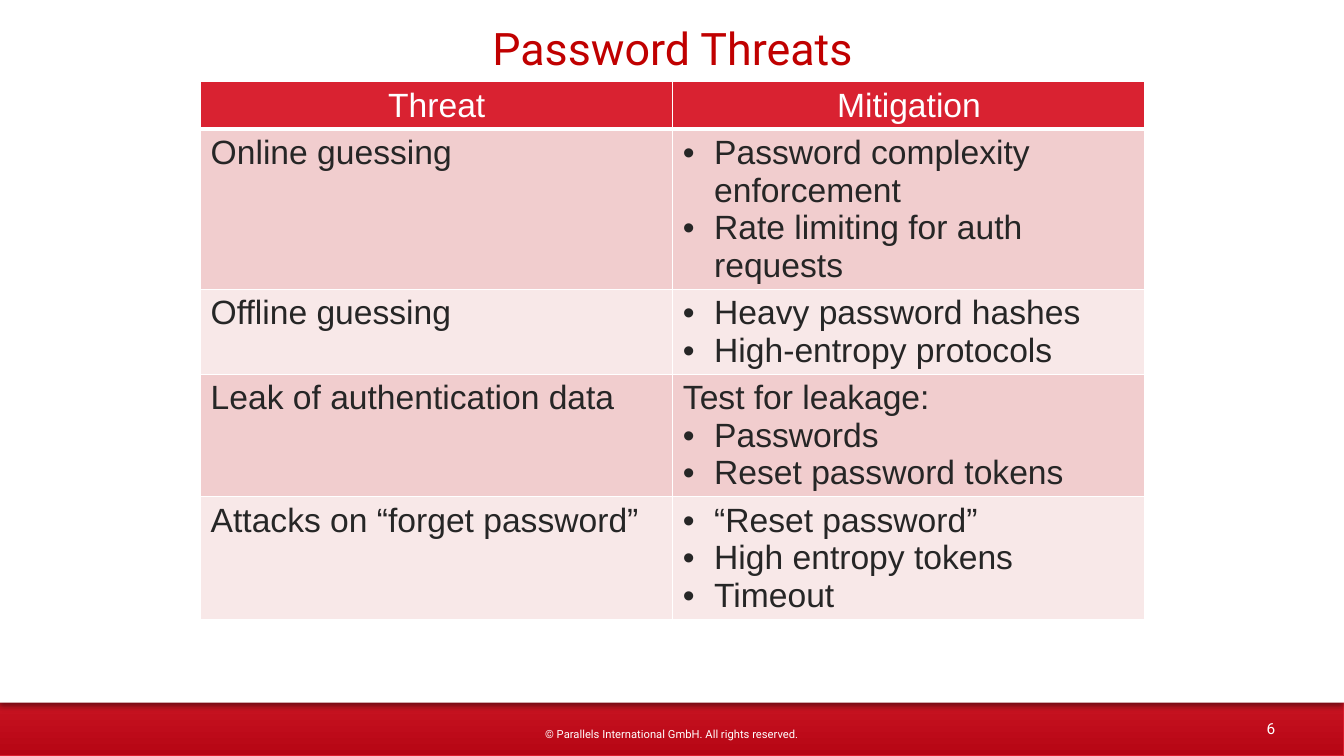
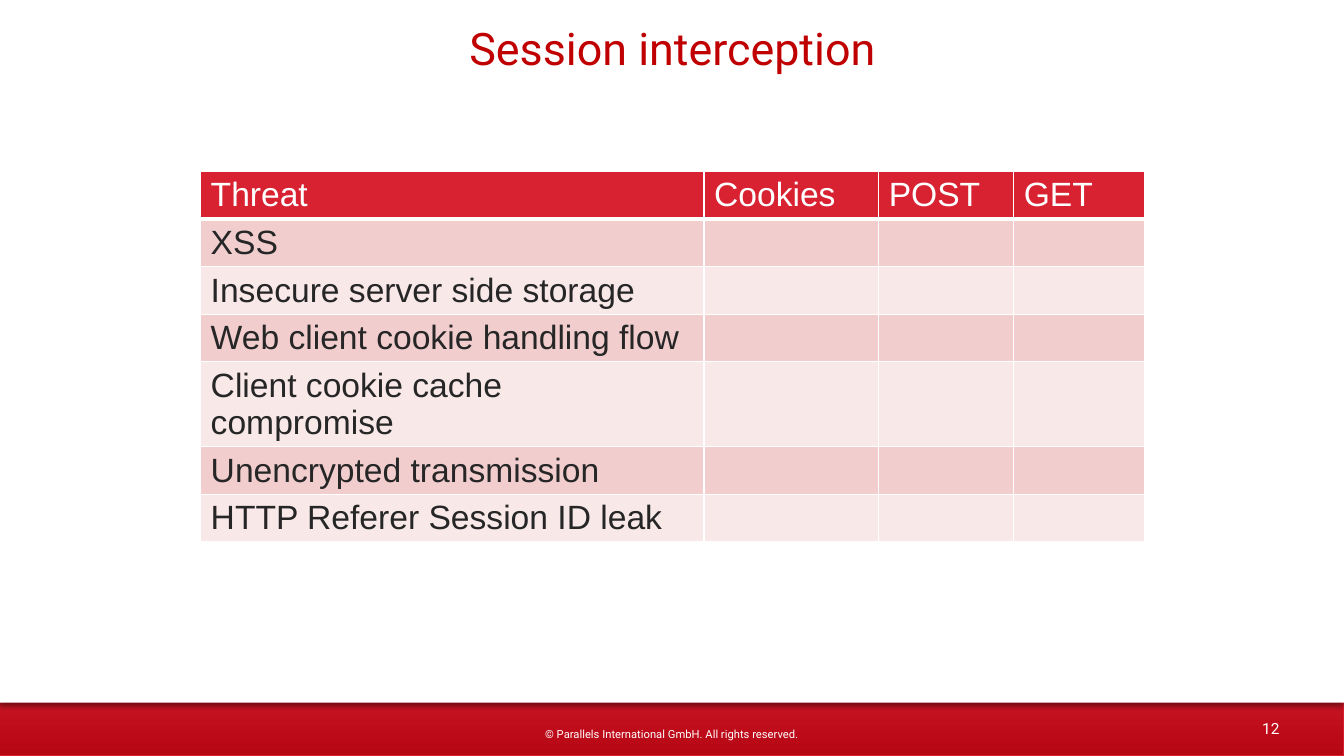
from lxml.etree import SubElement
from pptx import Presentation
from pptx.dml.color import RGBColor
from pptx.enum.shapes import MSO_SHAPE
from pptx.enum.text import MSO_ANCHOR, PP_ALIGN
from pptx.oxml import parse_xml
from pptx.oxml.ns import nsdecls, qn
from pptx.util import Inches, Pt

WHITE = RGBColor(0xFF, 0xFF, 0xFF)
INK = RGBColor(0x26, 0x26, 0x26)
TITLE_RED = RGBColor(0xC0, 0x00, 0x00)
BAND_DARK = RGBColor(0xB6, 0x05, 0x13)
BAND_LIGHT = RGBColor(0xD9, 0x22, 0x31)
BAND_EDGE = RGBColor(0xD9, 0x1D, 0x2C)
ROW_FILLS = (RGBColor(0xF8, 0xE8, 0xE8), RGBColor(0xF1, 0xCD, 0xCE))

TITLE = {"name": "Roboto", "size": Pt(32), "color": TITLE_RED}
NUMBER = {"name": "Roboto", "size": Pt(11), "color": WHITE}
COPYRIGHT = {"name": "Roboto", "size": Pt(8), "color": WHITE}
HEADER = {"name": "Arial", "size": Pt(24), "color": WHITE, "bold": False}
BODY = {**HEADER, "color": INK}

BULLET = "•"
BULLET_INDENT = Inches(0.31)
TABLE_LEFT, TABLE_WIDTH = 14.93, 70.27
LINE_HEIGHT, CELL_PADDING = 4.93, 1.33


class SlideBuilder:
    def __init__(self):
        self.deck = Presentation()
        self.deck.slide_width = Inches(13.33)
        self.deck.slide_height = Inches(7.5)
        self.page = None

    def across(self, percent):
        return round(self.deck.slide_width * percent / 100)

    def down(self, percent):
        return round(self.deck.slide_height * percent / 100)

    def area(self, left, top, width, height):
        return self.across(left), self.down(top), self.across(width), self.down(height)

    def add_text(self, para, text, style, align=PP_ALIGN.LEFT):
        para.alignment = align
        span = para.add_run()
        span.text = text
        for key, value in style.items():
            if key == "color":
                span.font.color.rgb = value
            else:
                setattr(span.font, key, value)

    def start(self, title, number):
        self.page = self.deck.slides.add_slide(self.deck.slide_layouts[5])
        self.band()
        self.label(str(number), NUMBER, (92.5, 94.27, 4.13, 4.13))
        self.label("© Parallels International GmbH. All rights reserved.",
                   COPYRIGHT, (38.4, 96.27, 23.2, 1.73),
                   {"vertical_anchor": MSO_ANCHOR.TOP, "margin_top": 0, "margin_bottom": 0})
        self.title(title)

    def title(self, text):
        box = self.page.shapes.title
        box.left, box.top, box.width, box.height = self.area(3.2, 2, 93.7, 8.53)
        box.text_frame.vertical_anchor = MSO_ANCHOR.MIDDLE
        self.add_text(box.text_frame.paragraphs[0], text, TITLE, PP_ALIGN.CENTER)
        self.page.shapes.element.append(box.element)

    def label(self, text, style, place, frame_format=None):
        box = self.page.shapes.add_textbox(*self.area(*place))
        settings = {"word_wrap": True, "vertical_anchor": MSO_ANCHOR.MIDDLE,
                    **(frame_format or {})}
        for key, value in settings.items():
            setattr(box.text_frame, key, value)
        self.add_text(box.text_frame.paragraphs[0], text, style, PP_ALIGN.CENTER)

    def panel(self, place, blur, distance, opacity):
        box = self.page.shapes.add_shape(MSO_SHAPE.RECTANGLE, *self.area(*place))
        box.shadow.inherit = False
        effects = box.element.spPr.find(qn("a:effectLst"))
        effects.append(parse_xml(
            f'<a:outerShdw {nsdecls("a")} blurRad="{Pt(blur)}" dist="{Pt(distance)}" '
            f'dir="5400000" rotWithShape="0"><a:srgbClr val="000000">'
            f'<a:alpha val="{opacity * 1000}"/></a:srgbClr></a:outerShdw>'))
        return box

    def band(self):
        band = self.panel((0, 83.33, 100, 16.67), 3.1, 1.8, 35)
        band.fill.gradient()
        band.fill.gradient_angle = 90
        stops = zip(band.fill.gradient_stops, (BAND_DARK, BAND_LIGHT), (0, 0.8))
        for stop, color, position in stops:
            stop.color.rgb = color
            stop.position = position
        band.line.color.rgb = BAND_EDGE
        band.line.width = Pt(0.75)
        sheet = self.panel((0, 0, 100, 92.93), 4, 3, 40)
        sheet.fill.solid()
        sheet.fill.fore_color.rgb = WHITE
        sheet.line.fill.background()

    def borders(self, cell, bottom):
        properties = cell._tc.get_or_add_tcPr()
        widths = {"lnL": 1, "lnR": 1, "lnT": 1, "lnB": bottom}
        for index, (side, width) in enumerate(widths.items()):
            properties.insert(index, parse_xml(
                f'<a:{side} {nsdecls("a")} w="{Pt(width)}"><a:solidFill>'
                f'<a:srgbClr val="{WHITE}"/></a:solidFill></a:{side}>'))

    def fill_cell(self, cell, text, is_header, fill, align):
        cell.fill.solid()
        cell.fill.fore_color.rgb = fill
        self.borders(cell, 3 if is_header else 1)
        frame = cell.text_frame
        for index, line in enumerate(text.splitlines()):
            para = frame.add_paragraph() if index else frame.paragraphs[0]
            if line.startswith(BULLET):
                properties = para._p.get_or_add_pPr()
                properties.set("marL", str(BULLET_INDENT))
                properties.set("indent", str(-BULLET_INDENT))
                SubElement(properties, qn("a:buFont")).set("typeface", "Arial")
                SubElement(properties, qn("a:buChar")).set("char", BULLET)
            self.add_text(para, line.removeprefix(BULLET),
                          HEADER if is_header else BODY, align)

    def table(self, top, column_shares, line_counts, rows, header_align=PP_ALIGN.LEFT):
        heights = [CELL_PADDING + count * LINE_HEIGHT for count in line_counts]
        place = self.area(TABLE_LEFT, top, TABLE_WIDTH, sum(heights))
        grid = self.page.shapes.add_table(len(rows), len(column_shares), *place).table
        for column, share in zip(grid.columns, column_shares):
            column.width = self.across(TABLE_WIDTH * share / 100)
        for row_index, (texts, height) in enumerate(zip(rows, heights)):
            grid.rows[row_index].height = self.down(height)
            is_header = row_index == 0
            fill = BAND_LIGHT if is_header else ROW_FILLS[row_index % 2]
            align = header_align if is_header else PP_ALIGN.LEFT
            for cell, text in zip(grid.rows[row_index].cells, texts):
                self.fill_cell(cell, text, is_header, fill, align)


def main():
    builder = SlideBuilder()

    builder.start("Password Threats", 6)
    builder.table(10.8, (50, 50), (1, 4, 2, 3, 3), [
        ("Threat", "Mitigation"),
        ("Online guessing",
         "•Password complexity enforcement\n•Rate limiting for auth requests"),
        ("Offline guessing", "•Heavy password hashes\n•High-entropy protocols"),
        ("Leak of authentication data",
         "Test for leakage:\n•Passwords\n•Reset password tokens"),
        ("Attacks on “forget password”",
         "•“Reset password”\n•High entropy tokens\n•Timeout"),
    ], PP_ALIGN.CENTER)

    builder.start("Session interception", 12)
    threats = ("XSS", "Insecure server side storage", "Web client cookie handling flow",
               "Client cookie cache compromise", "Unencrypted transmission",
               "HTTP Referer Session ID leak")
    builder.table(22.67, (53.3, 18.5, 14.3, 13.9), (1, 1, 1, 1, 2, 1, 1), [
        ("Threat", "Cookies", "POST", "GET"),
        *((threat, "", "", "") for threat in threats),
    ])

    builder.deck.save("out.pptx")


if __name__ == "__main__":
    main()
